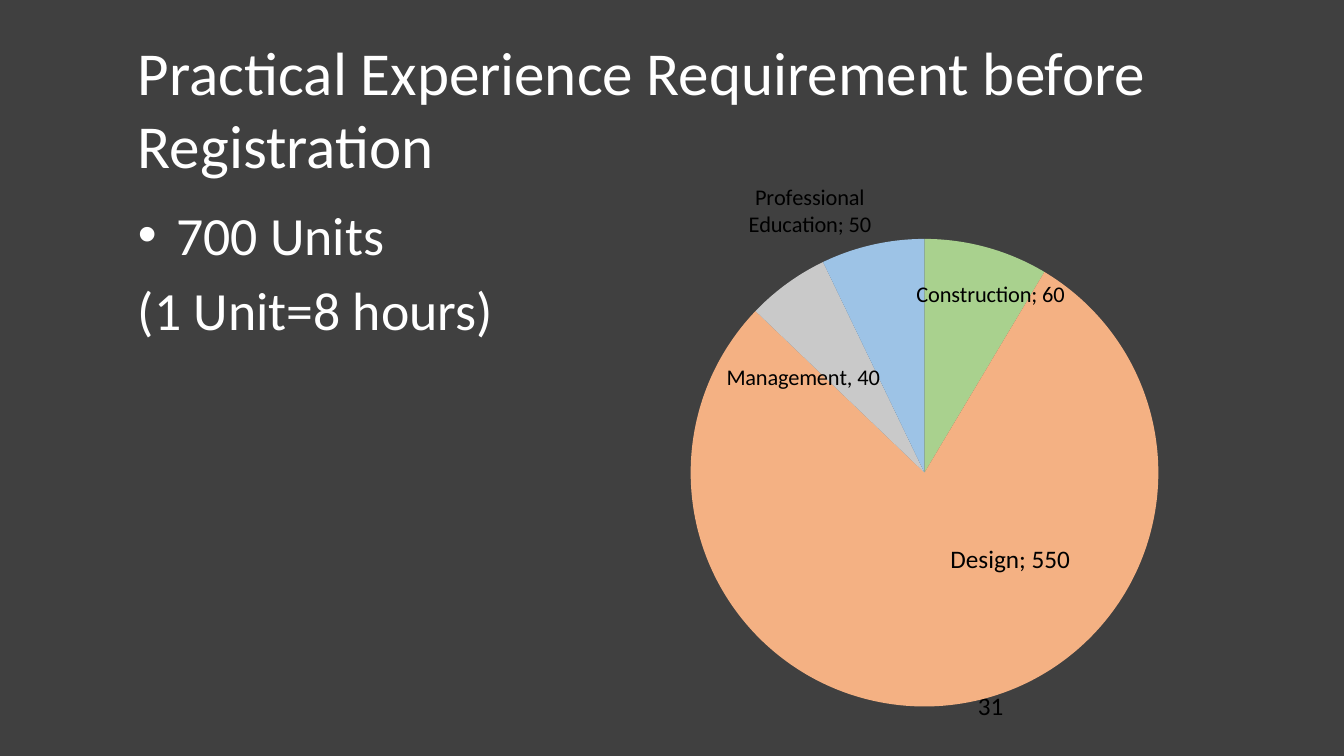
from lxml import etree
from pptx import Presentation
from pptx.chart.data import CategoryChartData
from pptx.dml.color import RGBColor
from pptx.enum.chart import XL_CHART_TYPE as ChartType, XL_LABEL_POSITION as LabelPosition
from pptx.enum.shapes import MSO_SHAPE
from pptx.oxml import parse_xml
from pptx.oxml.ns import nsdecls, qn
from pptx.util import Inches, Pt

FONT = "Calibri"
BLACK = RGBColor(0x00, 0x00, 0x00)
WHITE = RGBColor(0xFF, 0xFF, 0xFF)
CHARCOAL = RGBColor(0x40, 0x40, 0x40)
GREEN = RGBColor(0xA9, 0xD1, 0x8E)
ORANGE = RGBColor(0xF4, 0xB1, 0x83)
GREY = RGBColor(0xC9, 0xC9, 0xC9)
BLUE = RGBColor(0x9D, 0xC3, 0xE6)

WIDTH, HEIGHT = 13.33, 7.5
TITLE = "Practical Experience Requirement before Registration"
BODY = ["700 Units", "(1 Unit=8 hours)"]
PAGE_NUMBER = "31"
CHART_BOX = (4.59, 1.67, 8.69, 5.83)
PIE_CENTER = (9.17, 4.69)
PIE_DIAMETER = 4.64
CENTER, OUTSIDE = LabelPosition.CENTER, LabelPosition.OUTSIDE_END
SLICES = [
    ("Construction", 60, GREEN, 16, CENTER, (0.04, -0.11), None),
    ("Design", 550, ORANGE, 18, CENTER, (0.08, -0.05), None),
    ("Management", 40, GREY, 16, CENTER, (-0.06, 0), "Management, 40"),
    ("Professional Education", 50, BLUE, 16, OUTSIDE, None, None),
]


def style_font(font, size, color):
    font.name = FONT
    font.size = Pt(size)
    font.color.rgb = color


def add_text(slide, box, lines, size, color, top_inset=0.05):
    frame = slide.shapes.add_textbox(*map(Inches, box)).text_frame
    frame.word_wrap = True
    frame.margin_top = Inches(top_inset)
    for index, line in enumerate(lines):
        paragraph = frame.add_paragraph() if index else frame.paragraphs[0]
        if index:
            paragraph.space_before = Pt(size * 0.2)
        run = paragraph.add_run()
        run.text = line
        style_font(run.font, size, color)
    return frame


def add_bullet(paragraph, indent):
    properties = paragraph._p.get_or_add_pPr()
    properties.set("marL", str(Inches(indent)))
    properties.set("indent", str(-Inches(indent)))
    etree.SubElement(properties, qn("a:buFont")).set("typeface", "Arial")
    etree.SubElement(properties, qn("a:buChar")).set("char", "•")


def manual_layout(x, y, size=None):
    settings = [("x", x), ("y", y)]
    if size:
        modes = [("layoutTarget", "inner"), ("xMode", "edge"), ("yMode", "edge")]
        settings = modes + settings + [("w", size[0]), ("h", size[1])]
    layout = parse_xml(f"<c:layout {nsdecls('c')}><c:manualLayout/></c:layout>")
    for tag, value in settings:
        etree.SubElement(layout[0], qn(f"c:{tag}")).set("val", str(value))
    return layout


def style_label(label, size, position, text):
    if text:
        run = label.text_frame.paragraphs[0].add_run()
        run.text = text
        style_font(run.font, size, BLACK)
    else:
        style_font(label.font, size, BLACK)
    label.position = position


def add_pie(slide):
    data = CategoryChartData()
    data.categories = [entry[0] for entry in SLICES]
    data.add_series("Series 1", [entry[1] for entry in SLICES])
    chart = slide.shapes.add_chart(ChartType.PIE, *map(Inches, CHART_BOX), data).chart
    chart.has_legend = False
    chart.has_title = False
    style_font(chart.font, 18, BLACK)
    plot = chart.plots[0]
    plot.vary_by_categories = True
    points = plot.series[0].points
    for index, (name, value, color, size, position, offset, text) in enumerate(SLICES):
        point = points[index]
        point.format.fill.solid()
        point.format.fill.fore_color.rgb = color
        point.format.line.fill.background()
        style_label(point.data_label, size, position, text)
    for label, entry in zip(chart.element.iter(qn("c:dLbl")), SLICES):
        label.find(qn("c:showCatName")).set("val", "1")
        etree.SubElement(label, qn("c:separator")).text = "; "
        if entry[5]:
            label.find(qn("c:idx")).addnext(manual_layout(*entry[5]))
    left, top, width, height = CHART_BOX
    area = chart.element.find(".//" + qn("c:plotArea"))
    for layout in area.findall(qn("c:layout")):
        area.remove(layout)
    area.insert(0, manual_layout(
        round((PIE_CENTER[0] - PIE_DIAMETER / 2 - left) / width, 4),
        round((PIE_CENTER[1] - PIE_DIAMETER / 2 - top) / height, 4),
        (round(PIE_DIAMETER / width, 4), round(PIE_DIAMETER / height, 4)),
    ))


def main():
    presentation = Presentation()
    presentation.slide_width = Inches(WIDTH)
    presentation.slide_height = Inches(HEIGHT)
    slide = presentation.slides.add_slide(presentation.slide_layouts[6])
    backdrop = slide.shapes.add_shape(MSO_SHAPE.RECTANGLE, 0, 0, Inches(WIDTH), Inches(HEIGHT))
    backdrop.shadow.inherit = False
    backdrop.fill.solid()
    backdrop.fill.fore_color.rgb = CHARCOAL
    backdrop.line.fill.background()
    add_text(slide, (9.6, 6.8, 3.11, 0.52), [PAGE_NUMBER], 18, BLACK)
    body = add_text(slide, (1.27, 1.95, 10.8, 5.2), BODY, 38.4, WHITE)
    add_bullet(body.paragraphs[0], 0.38)
    add_text(slide, (1.27, 0.25, 11.4, 1.37), [TITLE], 43.6, WHITE, 0.09)
    add_pie(slide)
    presentation.save("out.pptx")


if __name__ == "__main__":
    main()
